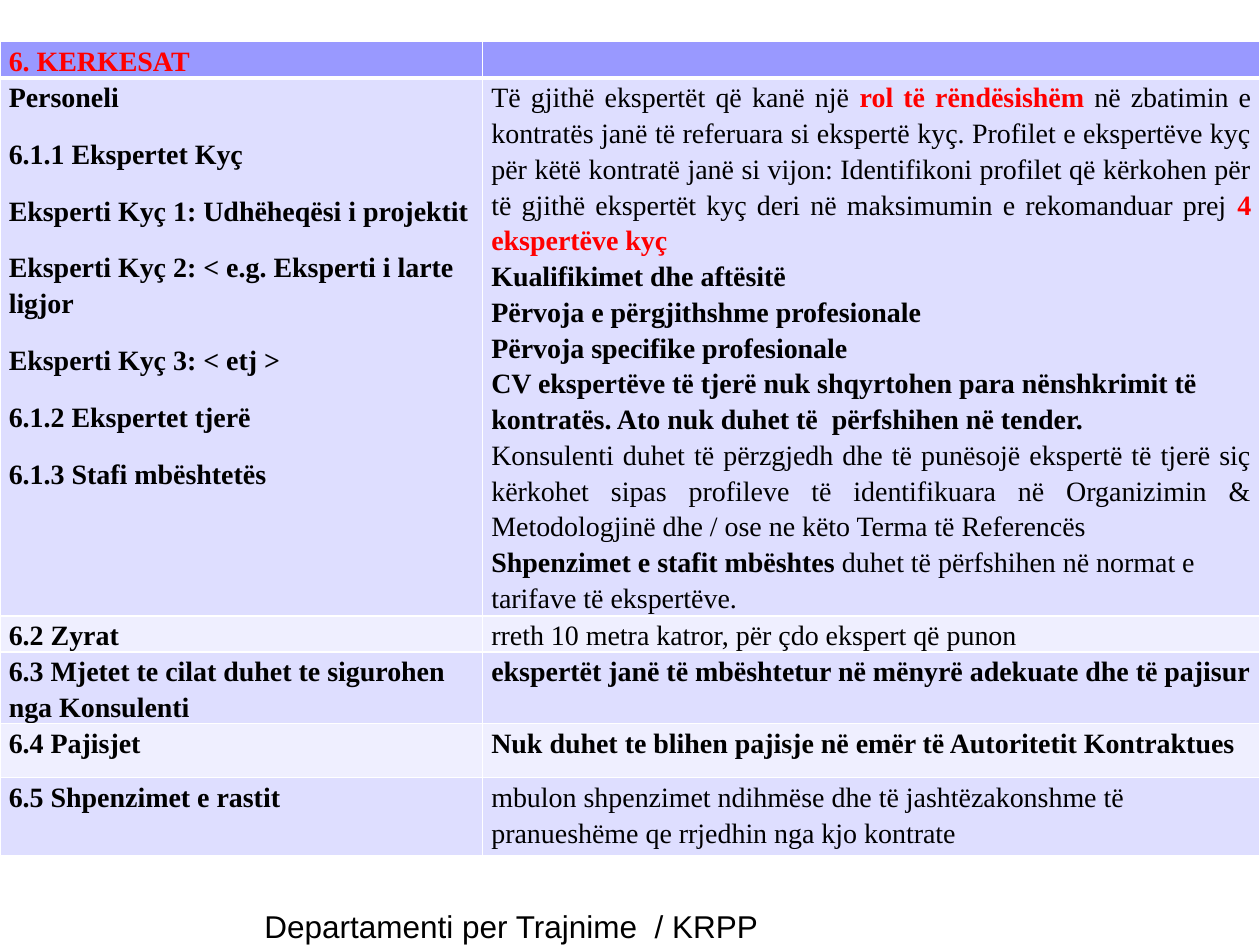
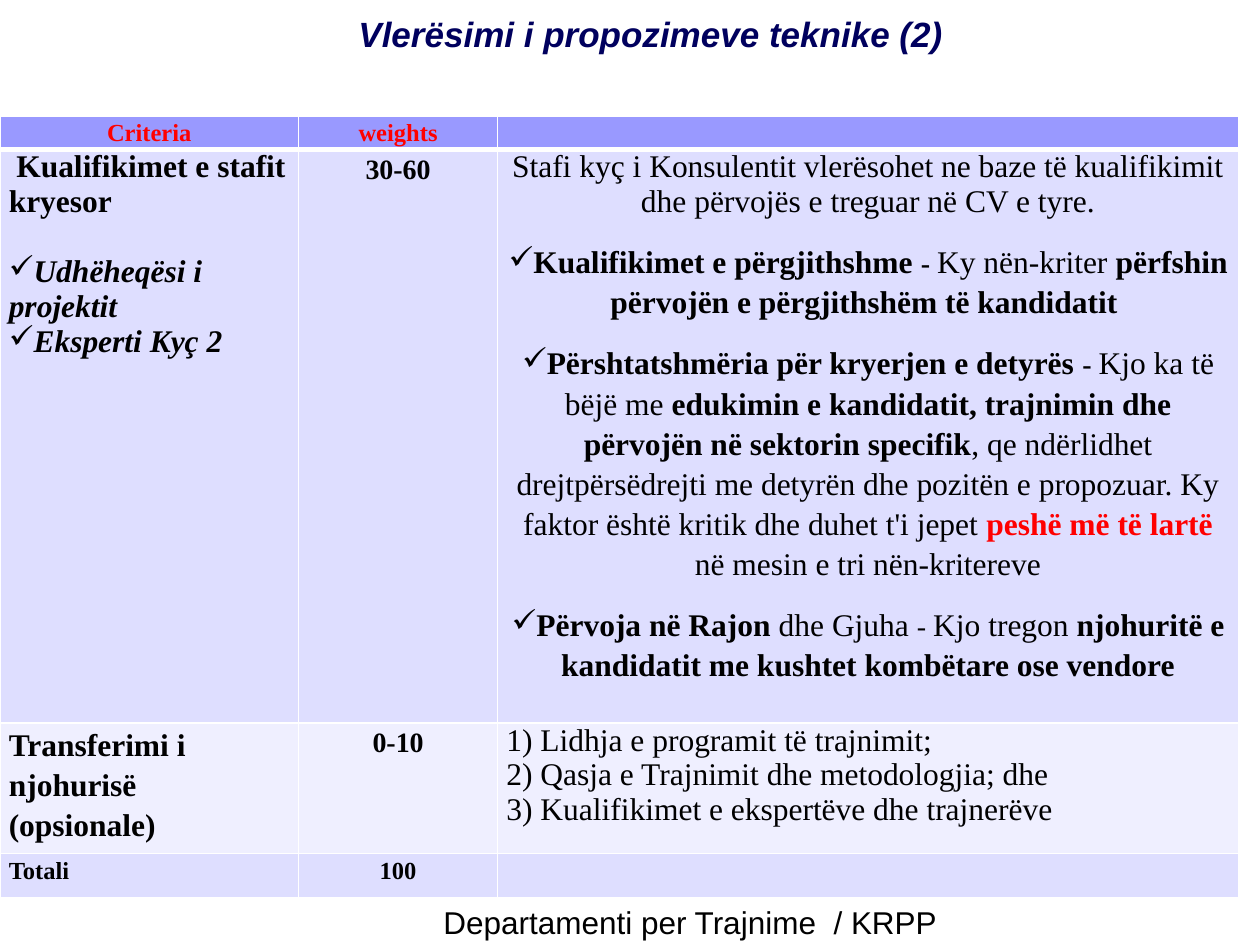
from lxml import etree
from pptx import Presentation, util as u
from pptx.dml.color import RGBColor
from pptx.enum import text
from pptx.oxml.ns import qn

# Shared look; lengths count the squares of a 10 x 7.5 grid, one inch each
COLS, ROWS = 10, 7.5
COLORS = {"header": "9999FF", "odd": "DEDEFF", "even": "EFEFFF", "border": "FFFFFF",
          "text": "000000", "accent": "FF0000", "title": "00005E"}
SERIF, SANS = "Times New Roman", "Arial"
FOOTER = "Departamenti per Trajnime  / KRPP"
LOOSE = 1.15
CENTER, JUSTIFY = text.PP_ALIGN.CENTER, text.PP_ALIGN.JUSTIFY


def grid(n):
    return u.Inches(n)


def rgb(name):
    return RGBColor.from_string(COLORS[name])


# Run styles
def bold(words, **kw):
    return words, dict(bold=True, **kw)


def red(words):
    return bold(words, color="accent")


def para(*runs, **fmt):
    """Describe a paragraph: plain strings or styled runs, and its format."""
    return runs, fmt


def heading(words, **fmt):
    return para(bold(words), **{"line": LOOSE, "before": 12, **fmt})


def check(*runs, **fmt):
    return para(*runs, bullet="✓", **fmt)


def write(p, runs, size=16, font=SERIF, color="text", align=None, line=None,
          before=0, indent=0, bullet=None):
    """Write runs into a paragraph with the given format."""
    if indent or bullet:
        pPr = p._p.get_or_add_pPr()
        pPr.set("marL", "0")
        pPr.set("indent", str(grid(indent)))
        if bullet:
            etree.SubElement(pPr, qn("a:buChar"), char=bullet)
    p.alignment = align
    p.space_before = u.Pt(before)
    if line:
        p.line_spacing = line
    for run in runs:
        words, style = (run, {}) if isinstance(run, str) else run
        r = p.add_run()
        r.text = words
        f = r.font
        f.name = font
        f.size = u.Pt(style.get("size", size))
        f.bold = style.get("bold", False)
        f.italic = style.get("italic", False)
        f.color.rgb = rgb(style.get("color", color))
    if not runs:
        etree.SubElement(p._p, qn("a:endParaRPr"), sz=str(size * 100))


def add_text(slide, left, top, width, height, *runs, **fmt):
    tf = slide.shapes.add_textbox(*map(grid, (left, top, width, height))).text_frame
    tf.word_wrap = True
    write(tf.paragraphs[0], runs, font=SANS, **fmt)


def add_footer(slide, left, top, width):
    add_text(slide, left, top, width, ROWS - top, FOOTER, size=18)


# Tables
def add_borders(cell, **widths):
    tcPr = cell._tc.get_or_add_tcPr()
    for side in "LRTB":
        ln = etree.SubElement(tcPr, qn(f"a:ln{side}"), w=str(u.Pt(widths.get(side, 1))))
        fill = etree.SubElement(ln, qn("a:solidFill"))
        etree.SubElement(fill, qn("a:srgbClr"), val=COLORS["border"])


def fill_cell(cell, paragraphs, row, size):
    add_borders(cell, **{0: {"B": 3}, 1: {"T": 3}}.get(row, {}))
    cell.fill.solid()
    cell.fill.fore_color.rgb = rgb("header" if row == 0 else "odd" if row % 2 else "even")
    cell.margin_left = cell.margin_right = grid(0.07)
    cell.margin_top = cell.margin_bottom = 0
    tf = cell.text_frame
    for i, (runs, fmt) in enumerate(paragraphs or [para()]):
        p = tf.add_paragraph() if i else tf.paragraphs[0]
        fmt = {"size": size, **fmt}
        write(p, runs, **(fmt if i else {**fmt, "before": 0}))


def add_table(slide, top, widths, heights, content, size):
    table = slide.shapes.add_table(len(heights), len(widths), 0, grid(top),
                                   grid(sum(widths)), grid(sum(heights))).table
    for column, width in zip(table.columns, widths):
        column.width = grid(width)
    for row, height in zip(table.rows, heights):
        row.height = grid(height)
    for y, cells in enumerate(content):
        for x, paragraphs in enumerate(cells):
            fill_cell(table.cell(y, x), paragraphs, y, size)


def requirements_slide(slide):
    staff = [heading(words) for words in (
        "Personeli",
        "6.1.1 Ekspertet Kyç",
        "Eksperti Kyç 1: Udhëheqësi i projektit",
        "Eksperti Kyç 2: < e.g. Eksperti i larte ligjor",
        "Eksperti Kyç 3: < etj >",
        "6.1.2 Ekspertet tjerë",
        "6.1.3 Stafi mbështetës")]
    key_experts = para(
        "Të gjithë ekspertët që kanë një ", red("rol të rëndësishëm"),
        " në zbatimin e kontratës janë të referuara si ekspertë kyç. Profilet e ekspertëve "
        "kyç për këtë kontratë janë si vijon: Identifikoni profilet që kërkohen për të gjithë "
        "ekspertët kyç deri në maksimumin e rekomanduar prej ",
        red("4 ekspertëve kyç"), align=JUSTIFY, line=LOOSE)
    profile = [heading(words, before=0) for words in (
        "Kualifikimet dhe aftësitë",
        "Përvoja e përgjithshme profesionale",
        "Përvoja specifike profesionale",
        "CV ekspertëve të tjerë nuk shqyrtohen para nënshkrimit të kontratës. "
        "Ato nuk duhet të  përfshihen në tender.")]
    other_experts = para(
        "Konsulenti duhet të përzgjedh dhe të punësojë ekspertë të tjerë siç kërkohet sipas "
        "profileve të identifikuara në Organizimin & Metodologjinë dhe / ose ne këto Terma "
        "të Referencës", align=JUSTIFY, line=LOOSE)
    support = para(bold("Shpenzimet e stafit mbështes"),
                   " duhet të përfshihen në normat e tarifave të ekspertëve.", line=LOOSE)
    content = [
        [[para(red("6. KERKESAT"), line=LOOSE)], []],
        [staff, [key_experts, *profile, other_experts, support]],
        [[heading("6.2 Zyrat")],
         [para("rreth 10 metra katror, për çdo ekspert që punon", line=LOOSE)]],
        [[heading("6.3 Mjetet te cilat duhet te sigurohen nga Konsulenti")],
         [heading("ekspertët janë të mbështetur në mënyrë adekuate dhe të pajisur")]],
        [[heading("6.4 Pajisjet")],
         [heading("Nuk duhet te blihen pajisje në emër të Autoritetit Kontraktues")]],
        [[heading("6.5 Shpenzimet e rastit")],
         [para("mbulon shpenzimet ndihmëse dhe të jashtëzakonshme të pranueshëme "
               "qe rrjedhin nga kjo kontrate", line=LOOSE)]],
    ]
    add_table(slide, 0.33, (3.83, 6.17), (0.29, 4.27, 0.27, 0.56, 0.43, 0.62), content, 16)
    add_footer(slide, 2, 7.15, 4.58)


def evaluation_slide(slide):
    dash = bold("- ", size=16)
    header = [[para(red(words), align=CENTER, line=LOOSE, size=14)]
              for words in ("Criteria", "weights")]
    staff = [
        para(bold("Kualifikimet e stafit kryesor"), indent=0.06),
        check(bold("Udhëheqësi i projektit", italic=True), before=20),
        check(bold("Eksperti Kyç 2", italic=True)),
    ]
    sub_criteria = [
        (bold("Kualifikimet e përgjithshme "), dash, "Ky nën-kriter ",
         bold("përfshin përvojën e përgjithshëm të kandidatit ")),
        (bold("Përshtatshmëria për kryerjen e detyrës "), dash, "Kjo ka të bëjë me ",
         bold("edukimin e kandidatit, trajnimin dhe përvojën në sektorin specifik"),
         ", qe ndërlidhet drejtpërsëdrejti me detyrën dhe pozitën e propozuar. "
         "Ky faktor është kritik dhe duhet t'i jepet ",
         red("peshë më të lartë "), "në mesin e tri nën-kritereve"),
        (bold("Përvoja në Rajon"), " dhe Gjuha ", ("- ", {"size": 16}), "Kjo tregon ",
         bold("njohuritë e kandidatit me kushtet kombëtare ose vendore")),
    ]
    assessment = [para("Stafi kyç i Konsulentit vlerësohet ne baze të kualifikimit dhe "
                       "përvojës e treguar në CV e tyre.", align=CENTER)]
    assessment += [check(*runs, align=CENTER, line=LOOSE, before=12) for runs in sub_criteria]
    transfer = [para(words) for words in (
        "1) Lidhja e programit të trajnimit;",
        "2) Qasja e Trajnimit dhe metodologjia; dhe",
        "3) Kualifikimet e ekspertëve dhe trajnerëve")]
    content = [
        [*header, [para(size=14)]],
        [staff, [heading("30-60", align=CENTER, size=16)], assessment],
        [[heading("Transferimi i njohurisë (opsionale)")],
         [heading("0-10", align=CENTER, size=16)], transfer],
        [[heading("Totali", size=14)], [heading("100", align=CENTER, size=14)],
         [para(size=14)]],
    ]
    add_table(slide, 0.92, (2.37, 1.58, 5.88), (0.26, 4.44, 1, 0.35), content, 18)
    add_text(slide, 0, 0.05, COLS, 0.77,
             bold("Vlerësimi i propozimeve teknike (2)", italic=True),
             size=20, color="title", align=CENTER, indent=0.33)
    add_footer(slide, 3.42, 7.12, 4.92)


def main():
    prs = Presentation()
    prs.slide_width, prs.slide_height = grid(COLS), grid(ROWS)
    for build in (requirements_slide, evaluation_slide):
        build(prs.slides.add_slide(prs.slide_layouts[6]))
    prs.save("out.pptx")


if __name__ == "__main__":
    main()
